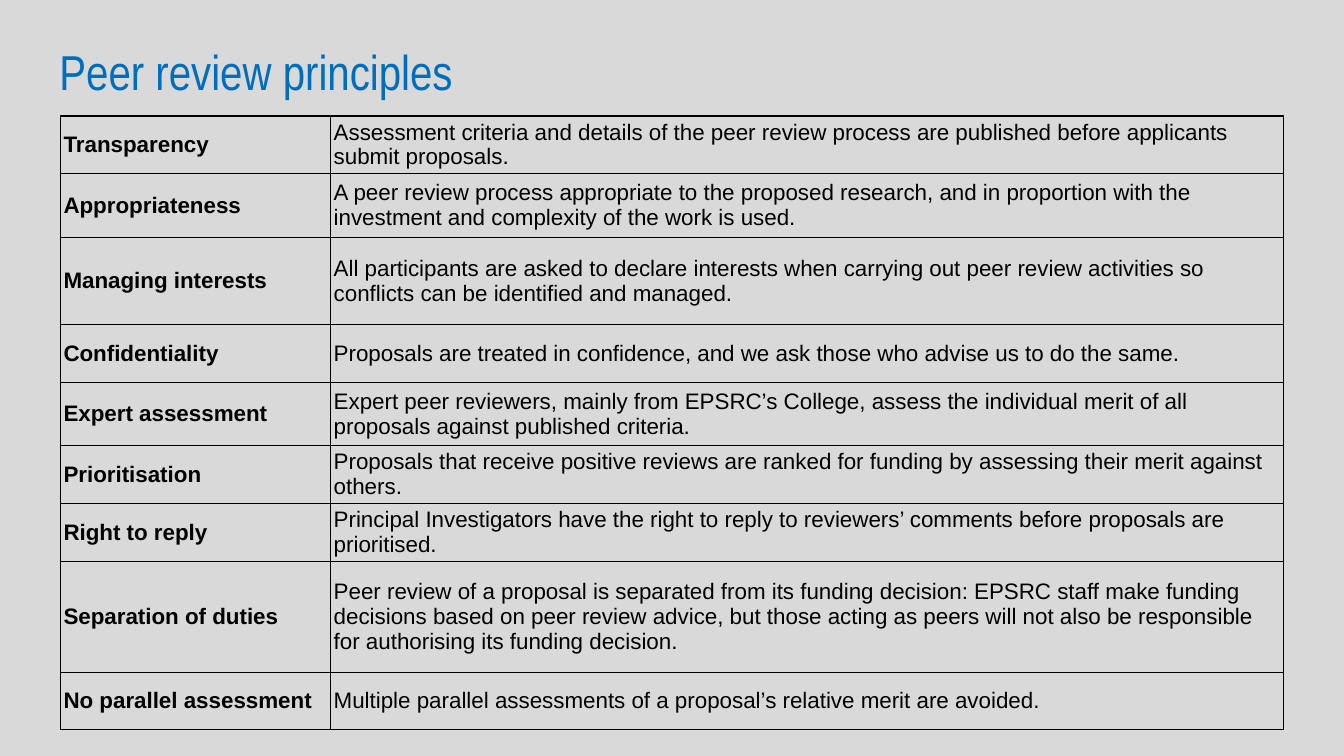
from lxml import etree
from pptx import Presentation
from pptx.dml.color import RGBColor
from pptx.enum import text
from pptx.oxml import ns
from pptx.util import Inches, Pt

PRINCIPLES = [
    ("Transparency", 0.57,
     "Assessment criteria and details of the peer review process are published "
     "before applicants submit proposals."),
    ("Appropriateness", 0.63,
     "A peer review process appropriate to the proposed research, and in proportion "
     "with the investment and complexity of the work is used."),
    ("Managing interests", 0.87,
     "All participants are asked to declare interests when carrying out peer review "
     "activities so conflicts can be identified and managed."),
    ("Confidentiality", 0.57,
     "Proposals are treated in confidence, and we ask those who advise us to do the same."),
    ("Expert assessment", 0.63,
     "Expert peer reviewers, mainly from EPSRC’s College, assess the individual merit "
     "of all proposals against published criteria."),
    ("Prioritisation", 0.57,
     "Proposals that receive positive reviews are ranked for funding by assessing "
     "their merit against others."),
    ("Right to reply", 0.57,
     "Principal Investigators have the right to reply to reviewers’ comments before "
     "proposals are prioritised."),
    ("Separation of duties", 1.1,
     "Peer review of a proposal is separated from its funding decision: EPSRC staff "
     "make funding decisions based on peer review advice, but those acting as peers "
     "will not also be responsible for authorising its funding decision."),
    ("No parallel assessment", 0.57,
     "Multiple parallel assessments of a proposal’s relative merit are avoided."),
]


def paint(color, value):
    color.rgb = RGBColor.from_string(value)


def add_borders(cell, value, width):
    properties = cell._tc.get_or_add_tcPr()
    for position, side in enumerate(("lnL", "lnR", "lnT", "lnB")):
        line = etree.Element(ns.qn(f"a:{side}"), w=str(Pt(width)))
        fill = etree.SubElement(line, ns.qn("a:solidFill"))
        etree.SubElement(fill, ns.qn("a:srgbClr"), val=value)
        properties.insert(position, line)


deck = Presentation()
deck.slide_width, deck.slide_height = Inches(13.33), Inches(7.5)
page = deck.slides.add_slide(deck.slide_layouts[6])
page.background.fill.solid()
paint(page.background.fill.fore_color, "D9D9D9")

# Title
box = page.shapes.add_textbox(Inches(0.59), Inches(0.52), Inches(7.34), Inches(0.48))
frame = box.text_frame
frame.word_wrap = True
frame.vertical_anchor = text.MSO_ANCHOR.BOTTOM
frame.margin_left = frame.margin_right = frame.margin_top = frame.margin_bottom = 0
para = frame.paragraphs[0]
para.text = "Peer review principles"
para.line_spacing = 0.9
para.font.name, para.font.size = "Arial Narrow", Pt(35)
paint(para.font.color, "006EBE")

# Table of principles
table = page.shapes.add_table(len(PRINCIPLES), 2, Inches(0.6), Inches(1.15),
                              Inches(12.13), Inches(6.08)).table
table.first_row = table.horz_banding = False
for column, width in zip(table.columns, (2.68, 9.45)):
    column.width = Inches(width)

for row, (principle, height, meaning) in zip(table.rows, PRINCIPLES):
    row.height = Inches(height)
    for cell, words in zip(row.cells, (principle, meaning)):
        cell.fill.background()
        add_borders(cell, "000000", 1)
        cell.vertical_anchor = text.MSO_ANCHOR.MIDDLE
        cell.margin_left = cell.margin_right = Inches(0.03)
        cell.margin_top = cell.margin_bottom = Inches(0.02)
        para = cell.text_frame.paragraphs[0]
        para.text = words
        para.alignment = text.PP_ALIGN.LEFT
        para.font.name, para.font.size = "Arial", Pt(16)
        para.font.bold = words == principle
        paint(para.font.color, "000000")

deck.save("out.pptx")
